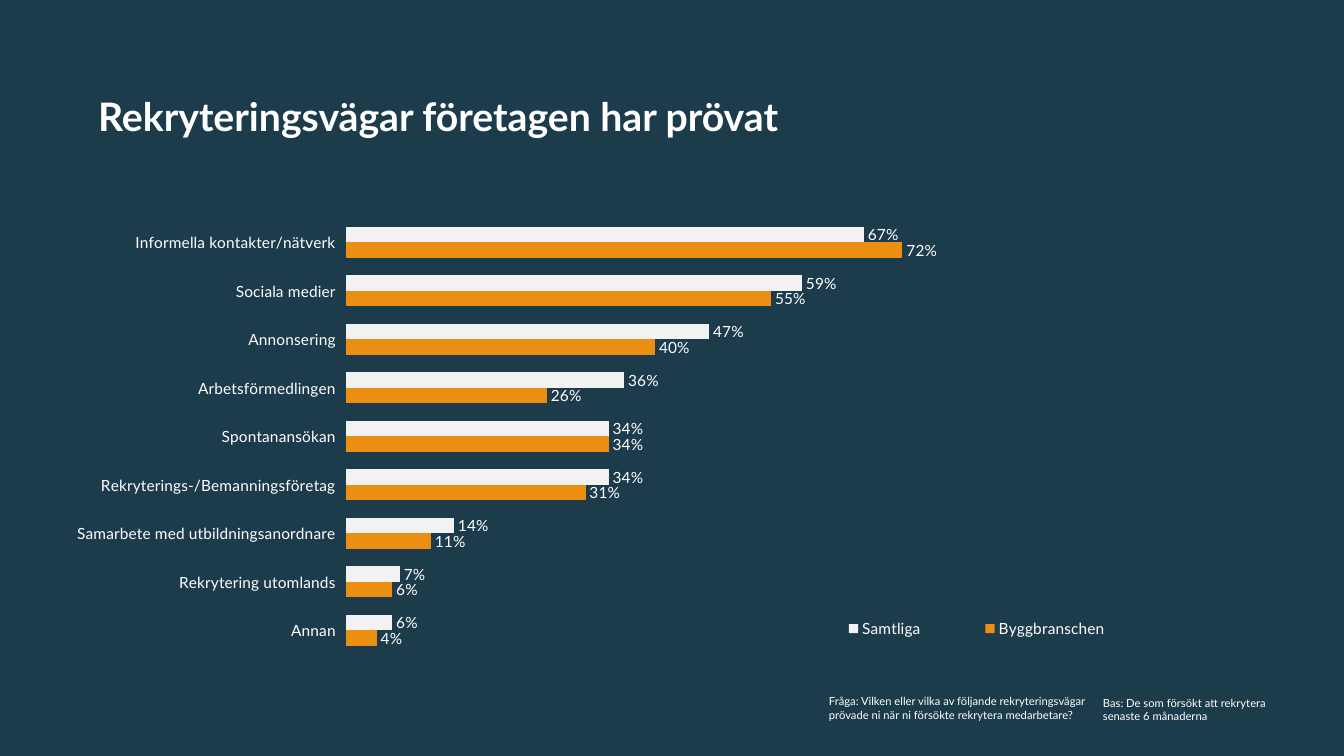
"""Build the slide on recruitment channels that companies have tried."""
from dataclasses import dataclass

from pptx import Presentation
from pptx.chart.chart import Chart
from pptx.chart.data import CategoryChartData
from pptx.dml.color import RGBColor
from pptx.enum.chart import XL_CHART_TYPE as ChartType
from pptx.enum.chart import XL_LABEL_POSITION as LabelPosition
from pptx.enum.chart import XL_LEGEND_POSITION as LegendPosition
from pptx.enum.chart import XL_TICK_MARK as TickMark
from pptx.enum.text import MSO_ANCHOR as Anchor
from pptx.oxml import parse_xml
from pptx.oxml.ns import nsdecls
from pptx.oxml.xmlchemy import BaseOxmlElement
from pptx.slide import Slide
from pptx.util import Emu, Pt

EMU_PER_PX = 9525


@dataclass(frozen=True)
class Theme:
    background: RGBColor = RGBColor(0x1D, 0x3C, 0x4B)
    text: RGBColor = RGBColor(0xFF, 0xFF, 0xFF)
    font: str = "Lato"
    title_size: int = 28
    chart_size: int = 11
    note_size: int = 8


@dataclass(frozen=True)
class Box:
    left: int
    top: int
    width: int
    height: int

    def emu(self) -> tuple[Emu, Emu, Emu, Emu]:
        return px(self.left), px(self.top), px(self.width), px(self.height)


@dataclass(frozen=True)
class Label:
    box: Box
    text: str
    size: int
    bold: bool = False
    anchor: Anchor = Anchor.TOP
    line_spacing: float = 1.0


@dataclass(frozen=True)
class BarSeries:
    name: str
    color: RGBColor
    values: tuple[int, ...]


@dataclass(frozen=True)
class Layout:
    x: float
    y: float
    w: float
    h: float


THEME = Theme()
CHART_BOX = Box(37, 178, 1083, 495)
PLOT_LAYOUT = Layout(0.27, 0.06, 0.68, 0.84)
LEGEND_LAYOUT = Layout(0.66, 0.82, 0.33, 0.06)

LABELS = (
    Label(Box(84, 76, 905, 74), "Rekryteringsvägar företagen har prövat",
          THEME.title_size, True, Anchor.MIDDLE, 0.9),
    Label(Box(1041, 658, 193, 36),
          "Bas: De som försökt att rekrytera senaste 6 månaderna",
          THEME.note_size),
    Label(Box(780, 657, 269, 50),
          "Fråga: Vilken eller vilka av följande rekryteringsvägar "
          "prövade ni när ni försökte rekrytera medarbetare?",
          THEME.note_size),
)

CHANNELS = (
    "Annan",
    "Rekrytering utomlands",
    "Samarbete med utbildningsanordnare",
    "Rekryterings-/Bemanningsföretag",
    "Spontanansökan",
    "Arbetsförmedlingen",
    "Annonsering",
    "Sociala medier",
    "Informella kontakter/nätverk",
)

SERIES = (
    BarSeries("Byggbranschen", RGBColor(0xEA, 0x8F, 0x12),
              (4, 6, 11, 31, 34, 26, 40, 55, 72)),
    BarSeries("Samtliga", RGBColor(0xF2, 0xF2, 0xF2),
              (6, 7, 14, 34, 34, 36, 47, 59, 67)),
)


def px(length: int) -> Emu:
    return Emu(length * EMU_PER_PX)


def add_label(slide: Slide, label: Label) -> None:
    text_frame = slide.shapes.add_textbox(*label.box.emu()).text_frame
    text_frame.word_wrap = True
    text_frame.vertical_anchor = label.anchor
    text_frame.text = label.text
    paragraph = text_frame.paragraphs[0]
    paragraph.line_spacing = label.line_spacing
    font = paragraph.runs[0].font
    font.name = THEME.font
    font.size = Pt(label.size)
    font.bold = label.bold
    font.color.rgb = THEME.text


def set_layout(parent: BaseOxmlElement, index: int, layout: Layout,
               target: str = "") -> None:
    for existing in parent.xpath("c:layout"):
        parent.remove(existing)
    parent.insert(index, parse_xml(
        f'<c:layout {nsdecls("c")}><c:manualLayout>{target}'
        '<c:xMode val="edge"/><c:yMode val="edge"/>'
        f'<c:x val="{layout.x}"/><c:y val="{layout.y}"/>'
        f'<c:w val="{layout.w}"/><c:h val="{layout.h}"/>'
        '</c:manualLayout></c:layout>'))


def style_axes(chart: Chart) -> None:
    category_axis = chart.category_axis
    category_axis.major_tick_mark = TickMark.OUTSIDE
    category_axis.format.line.fill.background()
    value_axis = chart.value_axis
    value_axis.minimum_scale = 0
    value_axis.maximum_scale = 100
    value_axis.major_unit = 20
    value_axis.has_major_gridlines = False
    value_axis.visible = False


def style_bars(chart: Chart) -> None:
    plot = chart.plots[0]
    plot.gap_width = 115
    plot.overlap = 0
    plot.vary_by_categories = False
    for bars, series in zip(plot.series, SERIES):
        bars.format.fill.solid()
        bars.format.fill.fore_color.rgb = series.color
        labels = bars.data_labels
        labels.show_value = True
        labels.position = LabelPosition.OUTSIDE_END
        labels.number_format = r"##0\%"
        labels.number_format_is_linked = False


def add_channel_chart(slide: Slide) -> None:
    data = CategoryChartData()
    data.categories = CHANNELS
    for series in SERIES:
        data.add_series(series.name, series.values)
    chart = slide.shapes.add_chart(
        ChartType.BAR_CLUSTERED, *CHART_BOX.emu(), data).chart
    chart.has_title = False
    chart.font.name = THEME.font
    chart.font.size = Pt(THEME.chart_size)
    chart.font.color.rgb = THEME.text
    style_axes(chart)
    style_bars(chart)
    chart.has_legend = True
    chart.legend.position = LegendPosition.RIGHT
    chart.legend.include_in_layout = False
    plot_area, legend = chart.element.xpath("//c:plotArea | //c:legend")
    set_layout(plot_area, 0, PLOT_LAYOUT, '<c:layoutTarget val="inner"/>')
    set_layout(legend, 1, LEGEND_LAYOUT)


def main() -> None:
    presentation = Presentation()
    presentation.slide_width = px(1280)
    presentation.slide_height = px(720)
    slide = presentation.slides.add_slide(presentation.slide_layouts[6])
    slide.background.fill.solid()
    slide.background.fill.fore_color.rgb = THEME.background
    add_channel_chart(slide)
    for label in LABELS:
        add_label(slide, label)
    presentation.save("out.pptx")


if __name__ == "__main__":
    main()
